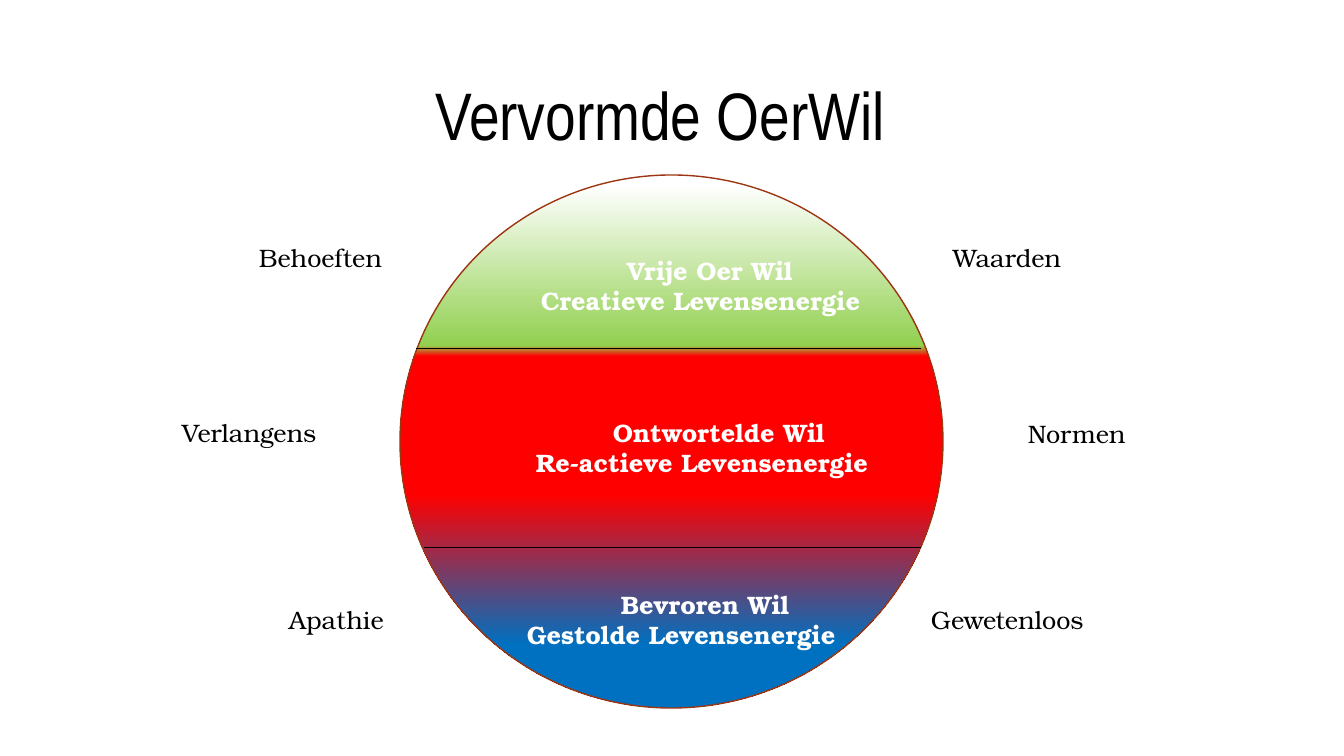
from lxml import etree
from pptx import Presentation
from pptx.dml.color import RGBColor
from pptx.enum.shapes import MSO_CONNECTOR, MSO_SHAPE
from pptx.enum.text import MSO_ANCHOR, MSO_AUTO_SIZE, PP_ALIGN
from pptx.oxml.ns import qn
from pptx.util import Pt

PX = 914400 / 100.8
STRAIGHT = MSO_CONNECTOR.STRAIGHT
CIRCLE = MSO_SHAPE.FLOWCHART_CONNECTOR
TOP = MSO_ANCHOR.TOP
GROW = MSO_AUTO_SIZE.SHAPE_TO_FIT_TEXT
CENTER = PP_ALIGN.CENTER

BLACK = RGBColor(0x00, 0x00, 0x00)
WHITE = RGBColor(0xFF, 0xFF, 0xFF)
GREEN = RGBColor(0x92, 0xD0, 0x50)
RED = RGBColor(0xFF, 0x00, 0x00)
BLUE = RGBColor(0x00, 0x70, 0xC0)
RUST = RGBColor(0x9C, 0x35, 0x11)

HEADING = "Vervormde OerWil"
HEADING_BOX = (228, 77, 865, 595)
WILL_CIRCLE = (400, 175, 543, 533)
WILL_GRADIENT = [(2, WHITE), (32, GREEN), (34, RED), (60, RED), (88, BLUE)]
DIVIDERS = [(921, 416, 348), (921, 424, 547)]
LAYERS = [
    ("Vrije Oer Wil", "Creatieve Levensenergie", 86, (531, 250, 356, 72)),
    ("Ontwortelde Wil", "Re-actieve Levensenergie", 77, (526, 412, 395, 72)),
    ("Bevroren Wil", "Gestolde Levensenergie", 94, (517, 584, 344, 72)),
]
SIDE_LABELS = [
    ("Behoeften", 249, 237), ("Waarden", 943, 237),
    ("Verlangens", 172, 412), ("Normen", 1018, 413),
    ("Apathie", 279, 599), ("Gewetenloos", 921, 599),
]
LABEL_WIDTH, LABEL_HEIGHT = 228, 40

HEADING_FONT = {"name": "Arial Narrow", "size": Pt(48), "bold": False}
LABEL_FONT = {"name": "TeX Gyre Bonum", "size": Pt(18), "bold": False}
LAYER_FONT = {**LABEL_FONT, "bold": True}


def emu(*lengths):
    return [round(length * PX) for length in lengths]


def write(paragraph, wording, look, color):
    paragraph.text = wording
    for attribute, value in look.items():
        setattr(paragraph.font, attribute, value)
    paragraph.font.color.rgb = color


def add_lines(slide, box, lines, look, color, first_indent=0):
    frame = slide.shapes.add_textbox(*emu(*box)).text_frame
    frame.word_wrap = True
    frame.auto_size = GROW
    for index, line in enumerate(lines):
        paragraph = frame.add_paragraph() if index else frame.paragraphs[0]
        write(paragraph, line, look, color)
    if first_indent:
        margin = emu(first_indent)[0]
        frame.paragraphs[0]._p.get_or_add_pPr().set("marL", str(margin))


def add_heading(slide):
    heading = slide.shapes.title
    heading.left, heading.top, heading.width, heading.height = emu(*HEADING_BOX)
    frame = heading.text_frame
    frame.vertical_anchor = TOP
    frame.word_wrap = True
    paragraph = frame.paragraphs[0]
    write(paragraph, HEADING, HEADING_FONT, BLACK)
    paragraph.alignment = CENTER
    paragraph.line_spacing = 0.9


def add_will_circle(slide):
    circle = slide.shapes.add_shape(CIRCLE, *emu(*WILL_CIRCLE))
    circle.shadow.inherit = False
    circle.line.color.rgb = RUST
    circle.line.width = Pt(1)
    circle.fill.gradient()
    gradient = circle._element.spPr.find(qn("a:gradFill"))
    stops = gradient.find(qn("a:gsLst"))
    for stop in list(stops):
        stops.remove(stop)
    for percent, color in WILL_GRADIENT:
        stop = etree.SubElement(stops, qn("a:gs"), pos=str(percent * 1000))
        etree.SubElement(stop, qn("a:srgbClr"), val=str(color))
    gradient.find(qn("a:lin")).set("ang", str(90 * 60000))


def add_divider(slide, start, end, height):
    divider = slide.shapes.add_connector(STRAIGHT, *emu(start, height, end, height))
    divider.line.color.rgb = BLACK
    divider.line.width = Pt(0.5)
    etree.SubElement(divider._element.spPr, qn("a:effectLst"))


def main():
    deck = Presentation()
    deck.slide_width, deck.slide_height = emu(1344, 756)
    slide = deck.slides.add_slide(deck.slide_layouts[5])
    add_heading(slide)
    add_will_circle(slide)
    for divider in DIVIDERS:
        add_divider(slide, *divider)
    for will, energy, indent, box in LAYERS:
        add_lines(slide, box, [will, energy], LAYER_FONT, WHITE, indent)
    for label, left, top in SIDE_LABELS:
        box = (left, top, LABEL_WIDTH, LABEL_HEIGHT)
        add_lines(slide, box, [label], LABEL_FONT, BLACK)
    deck.save("out.pptx")


if __name__ == "__main__":
    main()
